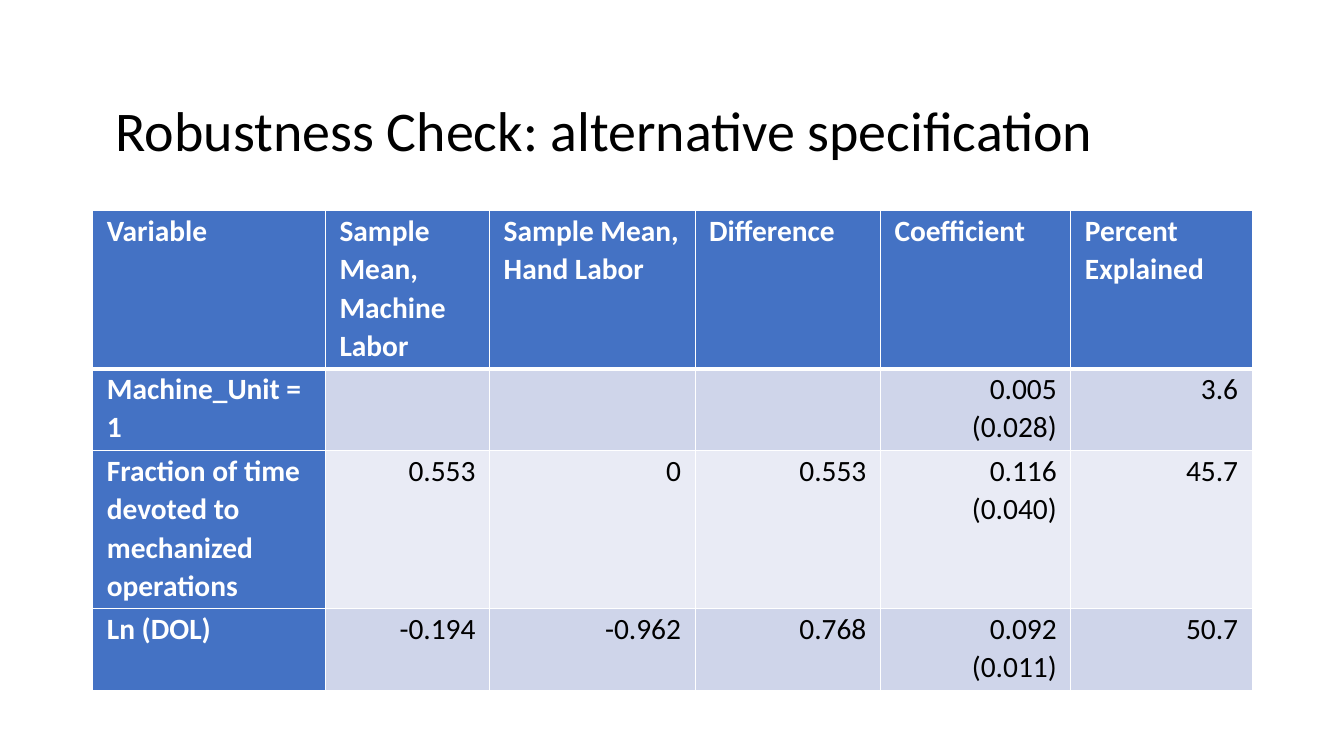
import pptx
import pptx.util
import pptx.dml.color
import pptx.enum.text
from lxml import etree
from pptx.util import Inches, Pt

FONT = "Calibri"
COLORS = {"ink": "000000", "white": "FFFFFF", "head": "4472C4",
          "band_dark": "CFD5EA", "band_light": "E9EBF5"}
COL_WIDTHS = [2.31, 1.63, 2.04, 1.84, 1.89, 1.8]
ROW_HEIGHTS = [1.57, 0.81, 1.57, 0.81]
ROWS = [
    ["Variable", "Sample Mean, Machine Labor", "Sample Mean, Hand Labor",
     "Difference", "Coefficient", "Percent Explained"],
    ["Machine_Unit = 1", "", "", "", "0.005\n(0.028)", "3.6"],
    ["Fraction of time devoted to mechanized operations",
     "0.553", "0", "0.553", "0.116\n(0.040)", "45.7"],
    ["Ln (DOL)", "-0.194", "-0.962", "0.768", "0.092\n(0.011)", "50.7"],
]
A = "http://schemas.openxmlformats.org/drawingml/2006/main"


def rgb(name):
    return pptx.dml.color.RGBColor.from_string(COLORS[name])


def write_text(tf, text, size=21, color="ink", bold=False, align="LEFT", spacing=1.07):
    """Write each line of text as a paragraph of its own."""
    for i, line in enumerate(text.split("\n")):
        p = tf.paragraphs[0] if i == 0 else tf.add_paragraph()
        p.alignment = getattr(pptx.enum.text.PP_ALIGN, align)
        p.line_spacing = spacing
        if line:
            r = p.add_run()
            r.text = line
            r.font.name, r.font.size, r.font.bold = FONT, Pt(size), bold
            r.font.color.rgb = rgb(color)


def set_borders(cell, **widths):
    """Draw white cell borders, with widths in points for L, R, T and B."""
    tc_pr = cell._tc.get_or_add_tcPr()
    for i, side in enumerate("LRTB"):
        ln = etree.Element(f"{{{A}}}ln{side}", w=str(Pt(widths.get(side, 1))))
        fill = etree.SubElement(ln, f"{{{A}}}solidFill")
        etree.SubElement(fill, f"{{{A}}}srgbClr", val=COLORS["white"])
        tc_pr.insert(i, ln)


def add_title(s, text, left, top, width, height):
    tf = s.shapes.add_textbox(Inches(left), Inches(top), Inches(width), Inches(height)).text_frame
    tf.word_wrap = True
    tf.vertical_anchor = pptx.enum.text.MSO_ANCHOR.BOTTOM
    write_text(tf, text, size=40, spacing=0.9)


def add_results_table(s, left, top, width, height):
    table = s.shapes.add_table(len(ROWS), len(COL_WIDTHS), Inches(left), Inches(top),
                               Inches(width), Inches(height)).table
    table.first_col = True
    for column, w in zip(table.columns, COL_WIDTHS):
        column.width = Inches(w * width / sum(COL_WIDTHS))
    for row, h in zip(table.rows, ROW_HEIGHTS):
        row.height = Inches(h * height / sum(ROW_HEIGHTS))
    for i, row in enumerate(ROWS):
        for j, text in enumerate(row):
            cell = table.cell(i, j)
            is_head = i == 0 or j == 0
            band = "band_dark" if i % 2 else "band_light"
            cell.fill.solid()
            cell.fill.fore_color.rgb = rgb("head" if is_head else band)
            cell.margin_left = cell.margin_right = Inches(0.14)
            cell.margin_top = cell.margin_bottom = 0
            set_borders(cell, T=3 if i == 1 else 1, B=3 if i == 0 else 1)
            write_text(cell.text_frame, text, bold=is_head,
                       color="white" if is_head else "ink",
                       align="LEFT" if is_head else "RIGHT")


def main():
    prs = pptx.Presentation()
    prs.slide_width, prs.slide_height = Inches(13.33), Inches(7.5)
    s = prs.slides.add_slide(prs.slide_layouts[6])
    add_title(s, "Robustness Check: alternative specification", 1.05, 0.65, 11.5, 1.02)
    add_results_table(s, 0.92, 2.09, 11.5, 4.76)
    prs.save("out.pptx")


if __name__ == "__main__":
    main()
